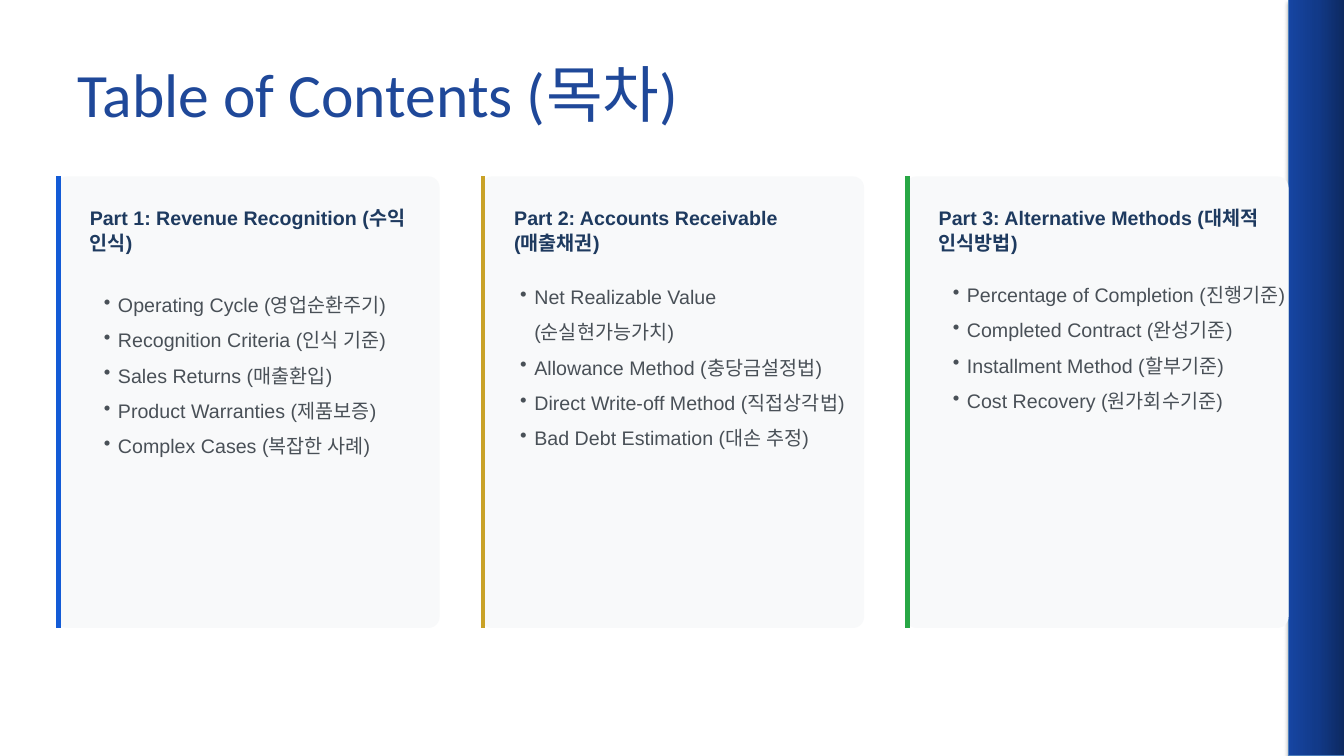
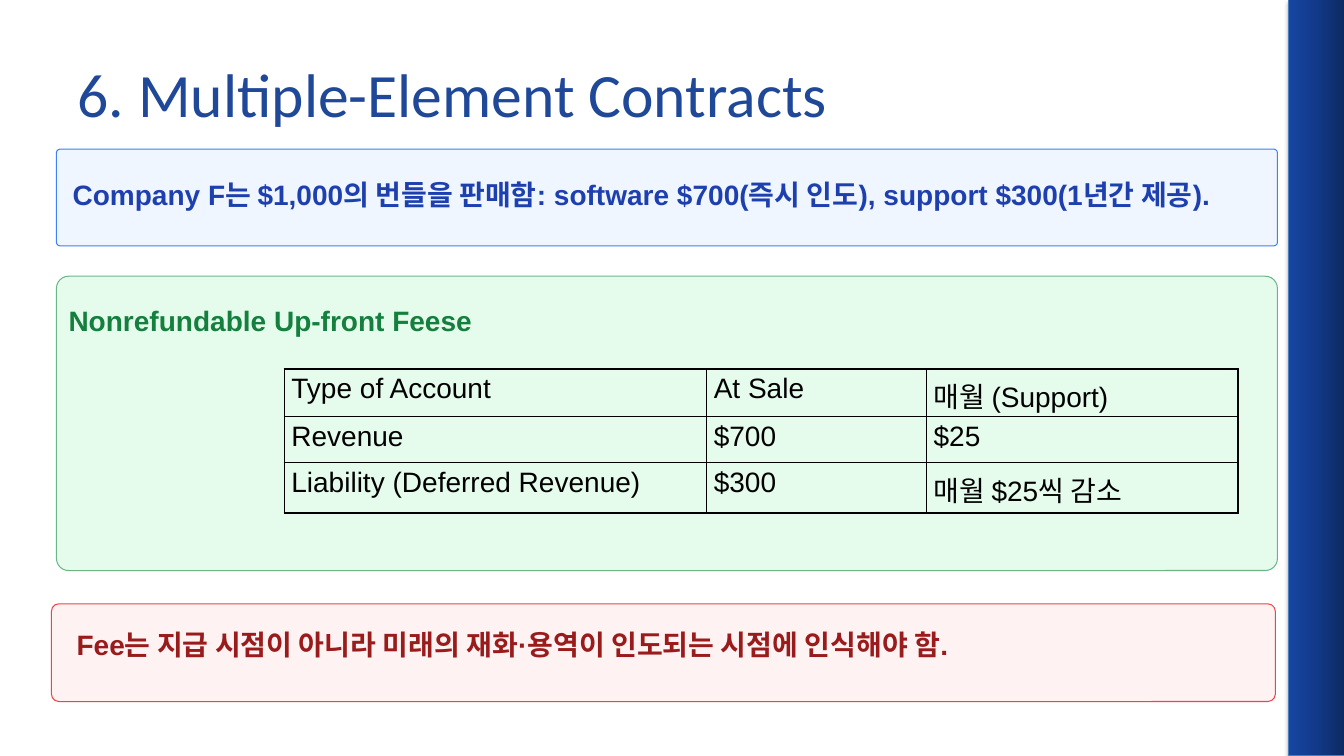
from dataclasses import dataclass

from lxml import etree
from pptx import Presentation
from pptx.dml.color import RGBColor
from pptx.enum.shapes import MSO_CONNECTOR, MSO_SHAPE
from pptx.enum.text import MSO_ANCHOR, PP_ALIGN
from pptx.oxml import parse_xml
from pptx.oxml.ns import qn
from pptx.util import Inches, Pt

RECT, ROUND = MSO_SHAPE.RECTANGLE, MSO_SHAPE.ROUNDED_RECTANGLE
STRAIGHT = MSO_CONNECTOR.STRAIGHT
LEFT, MIDDLE = PP_ALIGN.LEFT, MSO_ANCHOR.MIDDLE
NS = 'xmlns:a="http://schemas.openxmlformats.org/drawingml/2006/main"'


@dataclass(frozen=True)
class Theme:
    title_font: str = "Calibri"
    body_font: str = "Arial"
    title: str = "1F4899"
    heading: str = "1E3A5F"
    body: str = "495057"
    black: str = "000000"
    card: str = "F8F9FA"
    band: tuple = ((0, "0D2960"), (50, "123A89"), (100, "1645A2"))
    band_line: str = "4B7EBC"
    card_accents: tuple = ("135BD6", "C9A227", "28A745")
    blue: tuple = ("EFF6FF", "3B82F6", "1E40AF")
    green: tuple = ("E5FCED", "6DB587", "15803D")
    red: tuple = ("FEF2F2", "EF4444", "991B1B")
    title_size: float = 44
    large: float = 20
    small: float = 14
    hairline: float = 0.75


class Deck:
    def __init__(self, theme):
        self.theme = theme
        self.prs = Presentation()
        self.prs.slide_width, self.prs.slide_height = Inches(13.33), Inches(7.5)
        self.layout = self.prs.slide_layouts[5]
        self.s = None

    def slide(self, title):
        first = self.s is None
        self.s = self.prs.slides.add_slide(self.layout)
        if first:
            self.side_band()
        t = self.theme
        sp = self.s.shapes.title
        self.place(sp, 0.67, 0.3, 12, 1.25)
        sp.text_frame.vertical_anchor = MIDDLE
        p = sp.text_frame.paragraphs[0]
        p.alignment = LEFT
        self.run(p, title, t.title_size, t.title, font=t.title_font)

    def side_band(self):
        t = self.theme
        sp = self.box(RECT, 12.78, 0, 0.56, 7.5, t.card, t.band_line)
        stops = "".join(
            f'<a:gs pos="{pos * 1000}"><a:srgbClr val="{color}"/></a:gs>'
            for pos, color in t.band)
        props = sp.element.spPr
        props.replace(props.find(qn("a:solidFill")), parse_xml(
            f'<a:gradFill {NS} rotWithShape="1"><a:gsLst>{stops}</a:gsLst>'
            '<a:lin ang="10800000" scaled="0"/></a:gradFill>'))
        props.find(qn("a:effectLst")).append(parse_xml(
            f'<a:outerShdw {NS} blurRad="{Pt(3.1)}" dist="{Pt(1.8)}" dir="5400000" '
            'rotWithShape="0"><a:srgbClr val="000000"><a:alpha val="35000"/>'
            '</a:srgbClr></a:outerShdw>'))
        self.layout.shapes.element.insert(2, sp.element)

    def place(self, sp, x, y, w, h):
        sp.left, sp.top, sp.width, sp.height = map(Inches, (x, y, w, h))

    def run(self, p, text, size, color, bold=False, font=None):
        r = p.add_run()
        r.text = text
        r.font.name = font or self.theme.body_font
        r.font.size = Pt(size)
        r.font.bold = bold
        r.font.color.rgb = RGBColor.from_string(color)

    def box(self, kind, x, y, w, h, fill, line=None, radius=None):
        sp = self.s.shapes.add_shape(kind, *map(Inches, (x, y, w, h)))
        sp.shadow.inherit = False
        sp.fill.solid()
        sp.fill.fore_color.rgb = RGBColor.from_string(fill)
        if line:
            sp.line.color.rgb = RGBColor.from_string(line)
            sp.line.width = Pt(self.theme.hairline)
        else:
            sp.line.fill.background()
        if radius is not None:
            sp.adjustments[0] = radius
        return sp

    def vertical_line(self, x, top, bottom, color):
        line = self.s.shapes.add_connector(
            STRAIGHT, Inches(x), Inches(top), Inches(x), Inches(bottom))
        line.line.color.rgb = RGBColor.from_string(color)
        line.line.width = Pt(3)
        etree.SubElement(line.element.spPr, qn("a:effectLst"))

    def frame(self, x, y, w, h, inset=0):
        tf = self.s.shapes.add_textbox(*map(Inches, (x, y, w, h))).text_frame
        tf.word_wrap = True
        tf.margin_left = Inches(inset)
        tf.margin_top = tf.margin_right = tf.margin_bottom = 0
        return tf

    def heading(self, x, y, w, h, text, size, color, leading, after):
        p = self.frame(x, y, w, h).paragraphs[0]
        p.line_spacing, p.space_after = Pt(leading), Pt(after)
        self.run(p, text, size, color, bold=True)

    def bullets(self, x, y, w, h, items):
        indent = 0.14
        tf = self.frame(x, y, w, h, inset=indent)
        for i, item in enumerate(items):
            p = tf.paragraphs[0] if i == 0 else tf.add_paragraph()
            props = p._p.get_or_add_pPr()
            props.set("marL", str(Inches(indent)))
            props.set("indent", str(Inches(-indent)))
            etree.SubElement(props, qn("a:buChar"), char="•")
            p.line_spacing = 1.5
            self.run(p, item, self.theme.small, self.theme.body)

    def card(self, x, accent, title, items, list_x, list_y):
        t, top, h = self.theme, 1.75, 4.48
        self.box(ROUND, x, top, 3.8, h, t.card, radius=0.029)
        self.vertical_line(x + 0.02, top, top + h, accent)
        self.heading(x + 0.33, 2.03, 3.35, 0.43, title, t.small, t.heading, 17.8, 15)
        self.bullets(list_x, list_y, 3.44, 3, items)

    def panel(self, x, y, w, h, colors, radius, text, text_x, text_y):
        fill, line, color = colors
        self.box(ROUND, x, y, w, h, fill, line, radius)
        self.heading(text_x, text_y, 11.86, 0.34, text, self.theme.large, color, 22.4, 8)

    def table(self, x, y, widths, heights, rows):
        table = self.s.shapes.add_table(
            len(rows), len(widths), Inches(x), Inches(y),
            Inches(sum(widths)), Inches(sum(heights))).table
        table.first_row = table.horz_banding = False
        for column, width in zip(table.columns, widths):
            column.width = Inches(width)
        for row, height, texts in zip(table.rows, heights, rows):
            row.height = Inches(height)
            for cell, text in zip(row.cells, texts):
                self.cell(cell, text)

    def cell(self, cell, text):
        t = self.theme
        cell.margin_left = cell.margin_right = Inches(0.07)
        cell.margin_top = cell.margin_bottom = 0
        p = cell.text_frame.paragraphs[0]
        p.line_spacing, p.space_after = 1.15, Pt(10)
        self.run(p, text, t.large, t.black)
        cell.fill.background()
        props = cell._tc.get_or_add_tcPr()
        for i, side in enumerate(("lnL", "lnR", "lnT", "lnB")):
            props.insert(i, parse_xml(
                f'<a:{side} {NS} w="{Pt(1)}"><a:solidFill>'
                f'<a:srgbClr val="{t.black}"/></a:solidFill></a:{side}>'))


def contents_slide(deck):
    deck.slide("Table of Contents (목차)")
    parts = (
        ("Part 1: Revenue Recognition (수익 인식)", 0.89, 2.79, (
            "Operating Cycle (영업순환주기)", "Recognition Criteria (인식 기준)",
            "Sales Returns (매출환입)", "Product Warranties (제품보증)",
            "Complex Cases (복잡한 사례)")),
        ("Part 2: Accounts Receivable (매출채권)", 5.02, 2.71, (
            "Net Realizable Value (순실현가능가치)", "Allowance Method (충당금설정법)",
            "Direct Write-off Method (직접상각법)", "Bad Debt Estimation (대손 추정)")),
        ("Part 3: Alternative Methods (대체적 인식방법)", 9.31, 2.69, (
            "Percentage of Completion (진행기준)", "Completed Contract (완성기준)",
            "Installment Method (할부기준)", "Cost Recovery (원가회수기준)")),
    )
    for i, (title, list_x, list_y, items) in enumerate(parts):
        deck.card(0.56 + 4.21 * i, deck.theme.card_accents[i],
                  title, items, list_x, list_y)


def contracts_slide(deck):
    t = deck.theme
    deck.slide("6. Multiple-Element Contracts")
    deck.panel(0.56, 1.48, 12.11, 0.96, t.blue, 0.037,
               "Company F는 $1,000의 번들을 판매함: software $700(즉시 인도), "
               "support $300(1년간 제공).", 0.72, 1.78)
    deck.panel(0.56, 2.74, 12.11, 2.92, t.green, 0.041,
               "Nonrefundable Up-front Feese", 0.68, 3.03)
    deck.table(2.82, 3.66, (4.19, 2.18, 3.09), (0.47, 0.46, 0.5), (
        ("Type of Account", "At Sale", "매월 (Support)"),
        ("Revenue", "$700", "$25"),
        ("Liability (Deferred Revenue)", "$300", "매월 $25씩 감소"),
    ))
    deck.panel(0.51, 5.99, 12.14, 0.97, t.red, 0.078,
               "Fee는 지급 시점이 아니라 미래의 재화·용역이 인도되는 시점에 인식해야 함.",
               0.76, 6.25)


def main():
    deck = Deck(Theme())
    contents_slide(deck)
    contracts_slide(deck)
    deck.prs.save("out.pptx")


if __name__ == "__main__":
    main()
